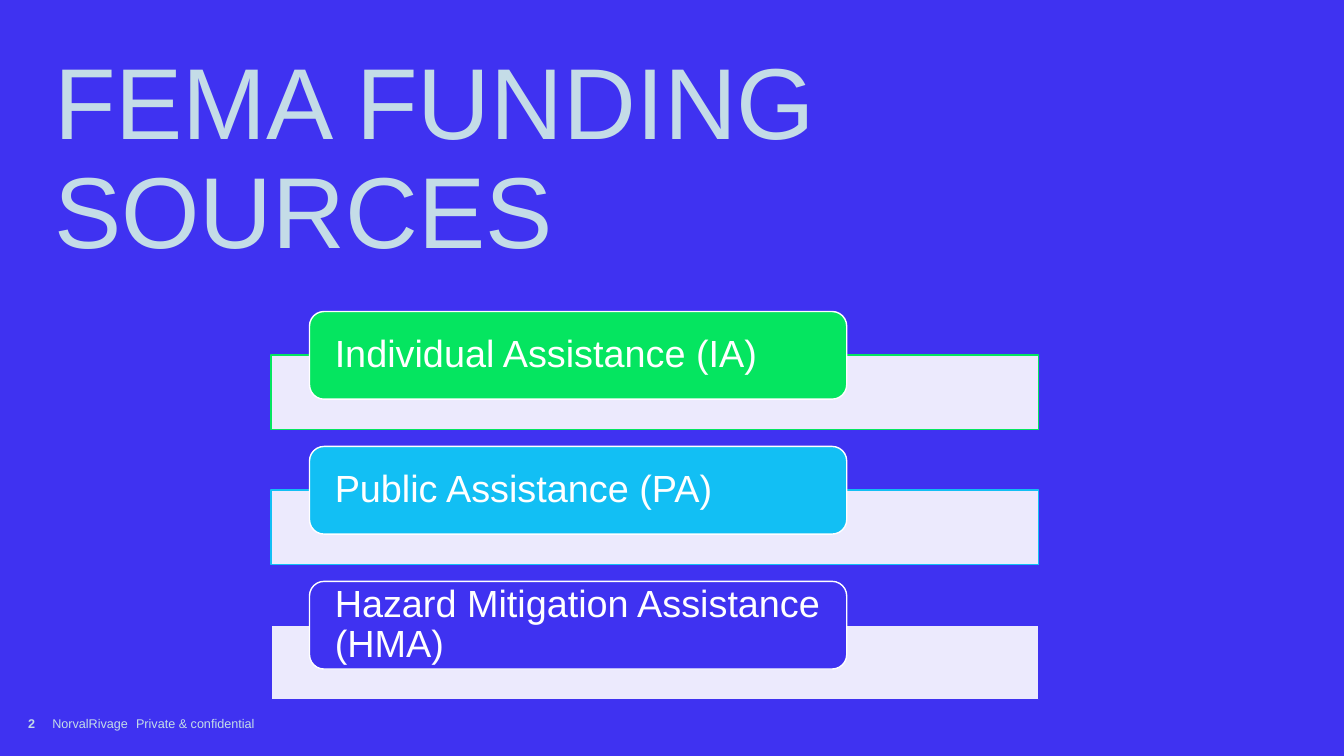
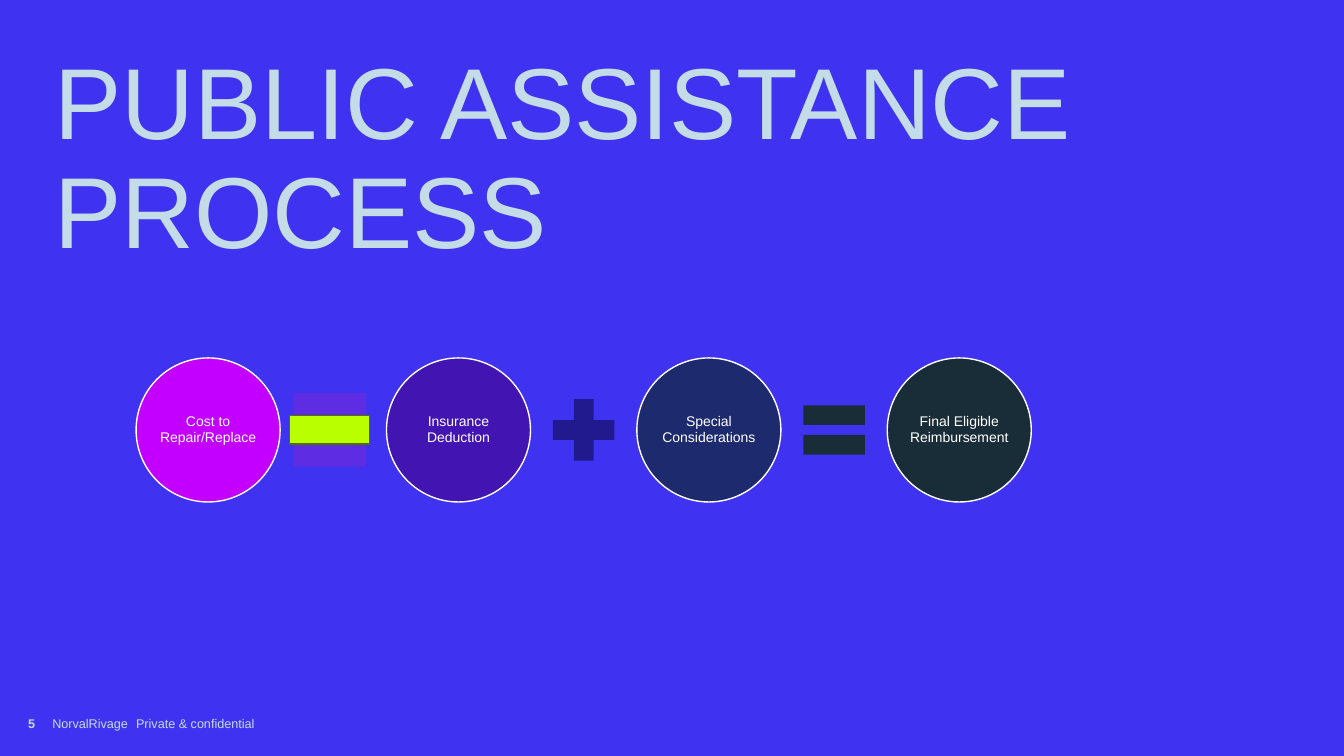
"""Two slides on disaster funding: the sources and the public assistance process."""
import pptx
import pptx.dml.color
import pptx.enum.shapes
import pptx.enum.text
import pptx.oxml
import pptx.util

Cm, Pt = pptx.util.Cm, pptx.util.Pt
SHAPE = pptx.enum.shapes.MSO_SHAPE
ALIGN = pptx.enum.text.PP_ALIGN
ANCHOR = pptx.enum.text.MSO_ANCHOR

COLORS = {
    "blue": "3F32F1", "pale": "C4DCE7", "white": "FFFFFF", "green": "05E560",
    "sky": "12BFF4", "magenta": "C300FF", "purple": "4214B1", "indigo": "211A8E",
    "navy": "1D2B6E", "slate": "192D38", "violet": "5E2DE3", "lime": "B9FF00",
    "olive": "517000",
}
FONT = "Arial"
COMPANY = "NorvalRivage"
NOTICE = "Private & confidential"

SOURCES_TITLE = "FEMA FUNDING SOURCES"
SOURCES = [
    ("Individual Assistance (IA)", "green"),
    ("Public Assistance (PA)", "sky"),
    ("Hazard Mitigation Assistance (HMA)", "blue"),
]
PROCESS_TITLE = "PUBLIC ASSISTANCE PROCESS"
STEPS = [
    ("Cost to Repair/Replace", "magenta"),
    ("Insurance Deduction", "purple"),
    ("Special Considerations", "navy"),
    ("Final Eligible Reimbursement", "slate"),
]
OPERATORS = [
    (0, SHAPE.RECTANGLE, 1.83, 1.85, -0.09, "violet", None),
    (0, SHAPE.MATH_MINUS, 2.74, 3.05, -0.09, "lime", "olive"),
    (1, SHAPE.MATH_PLUS, 2.11, 2.11, 0, "indigo", None),
    (2, SHAPE.MATH_EQUAL, 2.11, 2.11, 0, "slate", None),
]


def rgb(name):
    return pptx.dml.color.RGBColor.from_string(COLORS[name])


def write(sp, text, size=9, color="pale", bold=False, align=ALIGN.LEFT,
          anchor=ANCHOR.TOP, inset=(0, 0), spacing=1.0):
    tf = sp.text_frame
    tf.word_wrap = True
    tf.vertical_anchor = anchor
    tf.margin_left = tf.margin_right = Cm(inset[0])
    tf.margin_top = tf.margin_bottom = Cm(inset[1])
    p = tf.paragraphs[0]
    p.alignment = align
    p.line_spacing = spacing
    r = p.add_run()
    r.text = text
    r.font.name, r.font.size, r.font.bold = FONT, Pt(size), bold
    r.font.color.rgb = rgb(color)


def add_text(s, text, x, y, w, h, **style):
    write(s.shapes.add_textbox(Cm(x), Cm(y), Cm(w), Cm(h)), text, **style)


def add_shape(s, kind, x, y, w, h, fill, line=None, alpha=None):
    sp = s.shapes.add_shape(kind, Cm(x), Cm(y), Cm(w), Cm(h))
    sp.shadow.inherit = False
    sp.fill.solid()
    sp.fill.fore_color.rgb = rgb(fill)
    if alpha is not None:
        color = sp.fill._xPr.find(".//" + pptx.oxml.ns.qn("a:srgbClr"))
        pptx.oxml.xmlchemy.OxmlElement("a:alpha")
        child = pptx.oxml.xmlchemy.OxmlElement("a:alpha")
        child.set("val", str(alpha * 1000))
        color.append(child)
    if line:
        sp.line.color.rgb = rgb(line)
        sp.line.width = Pt(1)
    else:
        sp.line.fill.background()
    return sp


def add_slide(prs, title, number):
    s = prs.slides.add_slide(prs.slide_layouts[6])
    s.background.fill.solid()
    s.background.fill.fore_color.rgb = rgb("blue")
    add_text(s, title, 1.37, 1.32, 31.19, 2.79, size=72, spacing=0.9)
    add_text(s, str(number), 0.71, 18.03, 0.6, 0.64, bold=True)
    add_text(s, COMPANY, 1.32, 18.03, 2.1, 0.64)
    add_text(s, NOTICE, 3.43, 18.03, 13.56, 0.64)
    return s


def add_sources(s):
    top, pitch = 7.85, 3.4
    for i, (label, color) in enumerate(SOURCES):
        y = top + i * pitch
        add_shape(s, SHAPE.RECTANGLE, 6.83, y + 1.1, 19.35, 1.88, "white", color, alpha=90)
        tab = add_shape(s, SHAPE.ROUNDED_RECTANGLE, 7.8, y, 13.54, 2.21, color, "white")
        write(tab, label, size=27, color="white", anchor=ANCHOR.MIDDLE,
              inset=(0.53, 0), spacing=0.9)


def add_process(s):
    left, top, size, pitch = 3.43, 9.02, 3.63, 6.31
    for i, (label, color) in enumerate(STEPS):
        circle = add_shape(s, SHAPE.OVAL, left + i * pitch, top, size, size, color, "white")
        write(circle, label, size=10, color="white", align=ALIGN.CENTER,
              anchor=ANCHOR.MIDDLE, inset=(0.03, 0.03), spacing=0.9)
    for gap, kind, w, h, shift, fill, line in OPERATORS:
        center = left + gap * pitch + (size + pitch) / 2 + shift
        add_shape(s, kind, center - w / 2, top + (size - h) / 2, w, h, fill, line)


def main():
    prs = pptx.Presentation()
    prs.slide_width, prs.slide_height = Cm(33.87), Cm(19.05)
    add_sources(add_slide(prs, SOURCES_TITLE, 2))
    add_process(add_slide(prs, PROCESS_TITLE, 5))
    prs.save("out.pptx")


if __name__ == "__main__":
    main()
